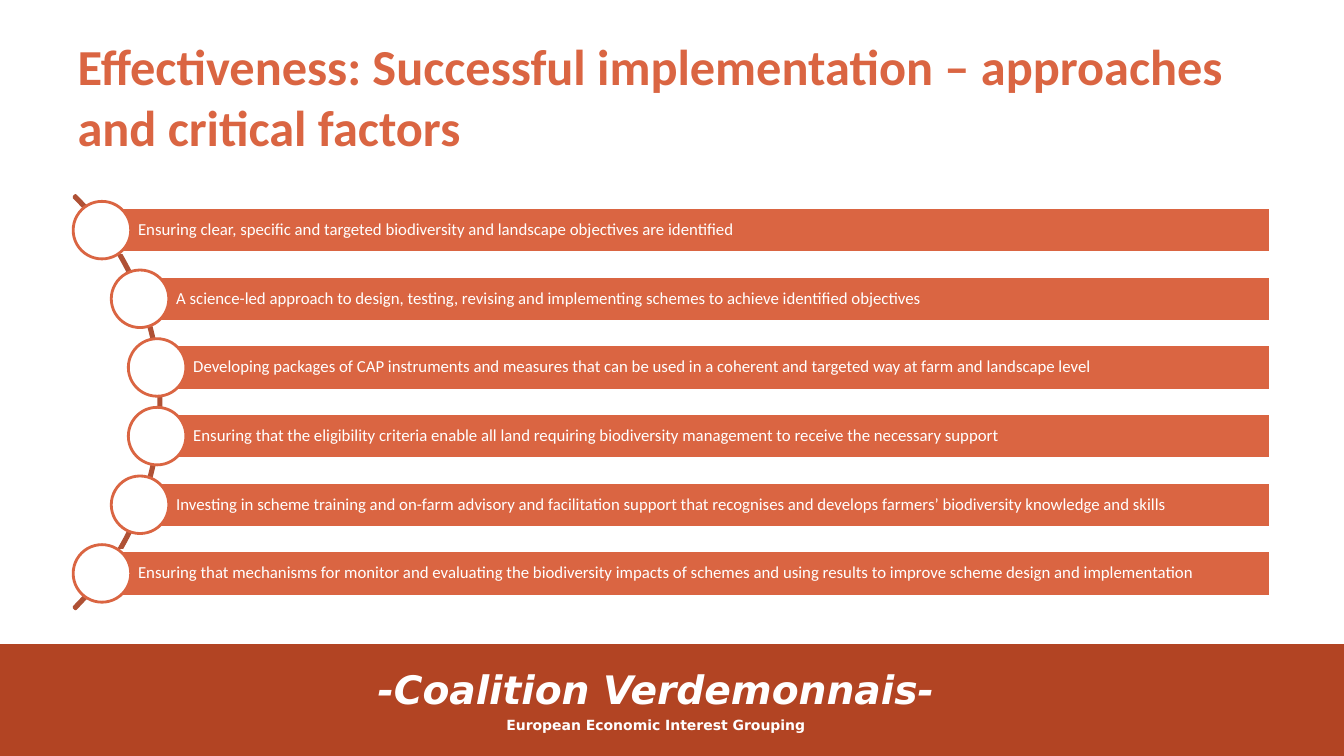
from pptx import Presentation
from pptx.dml.color import RGBColor
from pptx.enum.shapes import MSO_SHAPE as Preset
from pptx.enum.text import MSO_ANCHOR as Anchor, MSO_AUTO_SIZE as AutoSize, PP_ALIGN as Align
from pptx.util import Cm, Pt

WHITE = RGBColor(0xFF, 0xFF, 0xFF)
ORANGE = RGBColor(0xDA, 0x65, 0x42)
RUST = RGBColor(0xAF, 0x51, 0x35)
BRICK = RGBColor(0xB2, 0x44, 0x23)

BAR_TOP, BAR_HEIGHT, BAR_PITCH, BAR_RIGHT = 5.23, 1.14, 1.73, 32.02
CIRCLE_SIZE = 1.45
ARC_LEFT, ARC_TOP, ARC_SIZE = -10.67, 2.77, 14.73

# Left edge of each bar in cm, and its text
FACTORS = [
    (2.57, "Ensuring clear, specific and targeted biodiversity and landscape objectives are identified"),
    (3.53, "A science-led approach to design, testing, revising and implementing schemes "
           "to achieve identified objectives"),
    (3.96, "Developing packages of CAP instruments and measures that can be used in a coherent "
           "and targeted way at farm and landscape level"),
    (3.96, "Ensuring that the eligibility criteria enable all land requiring biodiversity management "
           "to receive the necessary support"),
    (3.53, "Investing in scheme training and on-farm advisory and facilitation support that recognises "
           "and develops farmers’ biodiversity knowledge and skills"),
    (2.57, "Ensuring that mechanisms for monitor and evaluating the biodiversity impacts of schemes "
           "and using results to improve scheme design and implementation"),
]
FOOTER_LINES = [
    ("-Coalition Verdemonnais-", {"size": Pt(28), "italic": True}),
    ("European Economic Interest Grouping", {"size": Pt(10), "italic": False}),
]


def add_shape(preset, left, top, width, height, fill=None, line=None):
    """Add a shadowless preset shape, measured in cm; no colour means no fill or line."""
    shape = slide.shapes.add_shape(preset, Cm(left), Cm(top), Cm(width), Cm(height))
    shape.shadow.inherit = False
    for target, color in ((shape.fill, fill), (shape.line.fill, line)):
        if color is None:
            target.background()
        else:
            target.solid()
            target.fore_color.rgb = color
    if line is not None:
        shape.line.width = Pt(2)
    return shape


def write_text(paragraph, text, color, **font_format):
    run = paragraph.add_run()
    run.text = text
    run.font.color.rgb = color
    for name, value in font_format.items():
        setattr(run.font, name, value)


presentation = Presentation()
presentation.slide_width = Cm(33.87)
presentation.slide_height = Cm(19.05)
slide = presentation.slides.add_slide(presentation.slide_layouts[5])

# Title
title = slide.shapes.title
title.left, title.top, title.width, title.height = Cm(1.7), Cm(0.76), Cm(30.48), Cm(3.18)
title.text_frame.auto_size = AutoSize.NONE
title.text_frame.vertical_anchor = Anchor.TOP
title_paragraph = title.text_frame.paragraphs[0]
title_paragraph.alignment = Align.LEFT
write_text(title_paragraph, "Effectiveness: Successful implementation – approaches and critical factors",
           ORANGE, name="Calibri", size=Pt(36), bold=True)

# Footer band
add_shape(Preset.RECTANGLE, 0, 16.23, 33.87, 2.82, fill=BRICK)
footer = slide.shapes.add_textbox(Cm(-0.41), Cm(16.64), Cm(33.87), Cm(2.01)).text_frame
footer.word_wrap = True
for index, (text, font_format) in enumerate(FOOTER_LINES):
    paragraph = footer.add_paragraph() if index else footer.paragraphs[0]
    paragraph.alignment = Align.CENTER
    paragraph.space_before = Pt(3)
    write_text(paragraph, text, WHITE, name="DejaVu Sans", bold=True, **font_format)

# Curve behind the circles
arc = add_shape(Preset.BLOCK_ARC, ARC_LEFT, ARC_TOP, ARC_SIZE, ARC_SIZE, line=RUST)
for index, value in enumerate((189, 27, 0.004)):
    arc.adjustments[index] = value

# Bars, each with a circle centred on its left edge
for row, (left, text) in enumerate(FACTORS):
    top = BAR_TOP + row * BAR_PITCH
    bar = add_shape(Preset.RECTANGLE, left, top, BAR_RIGHT - left, BAR_HEIGHT, fill=ORANGE, line=WHITE)
    frame = bar.text_frame
    frame_format = {"word_wrap": True, "vertical_anchor": Anchor.MIDDLE, "margin_left": Cm(0.91),
                    "margin_top": Cm(0.08), "margin_right": Cm(0.08), "margin_bottom": Cm(0.08)}
    for name, value in frame_format.items():
        setattr(frame, name, value)
    paragraph = frame.paragraphs[0]
    paragraph.alignment = Align.LEFT
    paragraph.line_spacing = 0.9
    write_text(paragraph, text, WHITE, name="Calibri", size=Pt(12))
    add_shape(Preset.OVAL, left - CIRCLE_SIZE / 2, top + (BAR_HEIGHT - CIRCLE_SIZE) / 2,
              CIRCLE_SIZE, CIRCLE_SIZE, fill=WHITE, line=ORANGE)

presentation.save("out.pptx")
